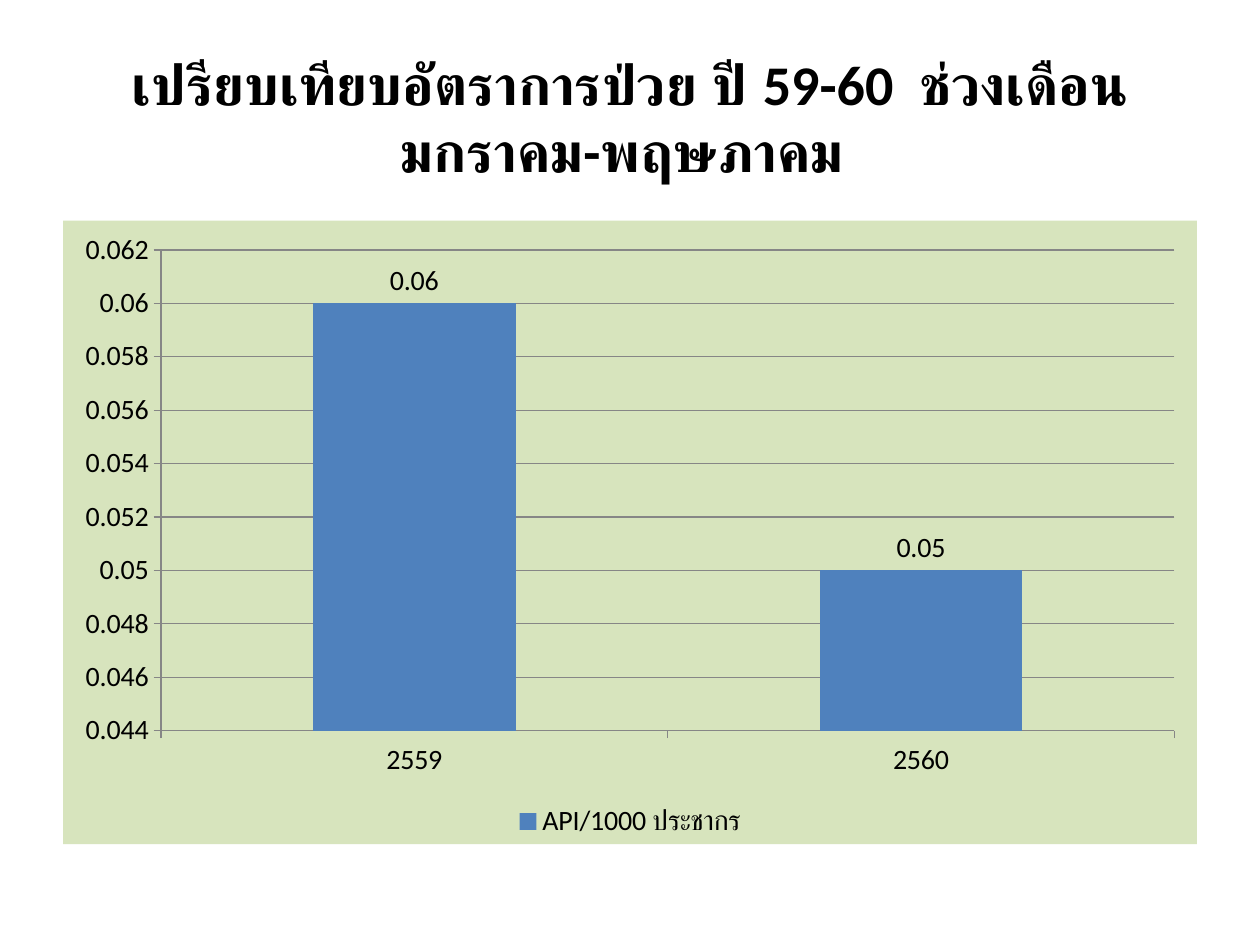
import pptx
import pptx.chart.data
import pptx.dml.color
import pptx.enum.chart
import pptx.enum.text
import pptx.oxml
import pptx.oxml.ns
import pptx.util

WIDTH, HEIGHT = pptx.util.Inches(10), pptx.util.Inches(7.5)
FONT = "Calibri"
BLACK, GRID_GREY, BAR_BLUE, PALE_GREEN = "000000", "868686", "4F81BD", "D7E4BD"


def rgb(value):
    """Turn a hex string into a colour."""
    return pptx.dml.color.RGBColor.from_string(value)


def share(left, top, width, height):
    """Turn shares of the slide's size into a box."""
    return int(left * WIDTH), int(top * HEIGHT), int(width * WIDTH), int(height * HEIGHT)


def style_font(font, size, bold=False):
    """Give a font the deck's face and colour."""
    font.name, font.size, font.bold = FONT, pptx.util.Pt(size), bold
    font.color.rgb = rgb(BLACK)


def add_heading(slide, box, wording):
    """Place the centred heading in its box."""
    frame = slide.shapes.add_textbox(*box).text_frame
    frame.word_wrap = True
    frame.vertical_anchor = pptx.enum.text.MSO_ANCHOR.MIDDLE
    heading = frame.paragraphs[0]
    heading.alignment = pptx.enum.text.PP_ALIGN.CENTER
    run = heading.add_run()
    run.text = wording
    style_font(run.font, 32, bold=True)


def fill_background(chart, colour):
    """Fill the whole chart area with a plain colour and no border."""
    area = pptx.oxml.parse_xml(
        f'<c:spPr {pptx.oxml.ns.nsdecls("c", "a")}><a:solidFill><a:srgbClr val="{colour}"/>'
        "</a:solidFill><a:ln><a:noFill/></a:ln></c:spPr>"
    )
    chart.element.find(pptx.oxml.ns.qn("c:chart")).addnext(area)


def add_rate_chart(slide, box, years, measure, rates):
    """Place the column chart of illness rates in its box."""
    rate_data = pptx.chart.data.CategoryChartData()
    rate_data.categories = years
    rate_data.add_series(measure, rates)
    kind = pptx.enum.chart.XL_CHART_TYPE.COLUMN_CLUSTERED
    chart = slide.shapes.add_chart(kind, *box, rate_data).chart
    style_font(chart.font, 16)
    fill_background(chart, PALE_GREEN)
    chart.has_title = False
    chart.has_legend = True
    chart.legend.position = pptx.enum.chart.XL_LEGEND_POSITION.BOTTOM
    chart.legend.include_in_layout = False

    chart.value_axis.has_major_gridlines = True
    gridlines = chart.value_axis.major_gridlines
    for ruled in (chart.category_axis, chart.value_axis, gridlines):
        ruled.format.line.color.rgb = rgb(GRID_GREY)
        ruled.format.line.width = pptx.util.Pt(0.75)
    for axis in (chart.category_axis, chart.value_axis):
        axis.major_tick_mark = pptx.enum.chart.XL_TICK_MARK.OUTSIDE
    chart.value_axis.minimum_scale = 0.044
    chart.value_axis.maximum_scale = 0.062
    chart.value_axis.major_unit = 0.002

    plot = chart.plots[0]
    plot.gap_width = 150
    plot.vary_by_categories = False
    plot.has_data_labels = True
    plot.data_labels.show_value = True
    plot.data_labels.position = pptx.enum.chart.XL_LABEL_POSITION.OUTSIDE_END
    style_font(plot.data_labels.font, 16)
    bars = plot.series[0].format.fill
    bars.solid()
    bars.fore_color.rgb = rgb(BAR_BLUE)


def main():
    """Build the slide and save it."""
    deck = pptx.Presentation()
    deck.slide_width, deck.slide_height = WIDTH, HEIGHT
    slide = deck.slides.add_slide(deck.slide_layouts[6])
    add_heading(slide, share(0.05, 0.04, 0.9, 1 / 6),
                "เปรียบเทียบอัตราการป่วย ปี 59-60  ช่วงเดือนมกราคม-พฤษภาคม ")
    add_rate_chart(slide, share(0.05, 0.7 / 3, 0.9, 0.66),
                   ["2559", "2560"], "API/1000 ประชากร", [0.06, 0.05])
    deck.save("out.pptx")


if __name__ == "__main__":
    main()
